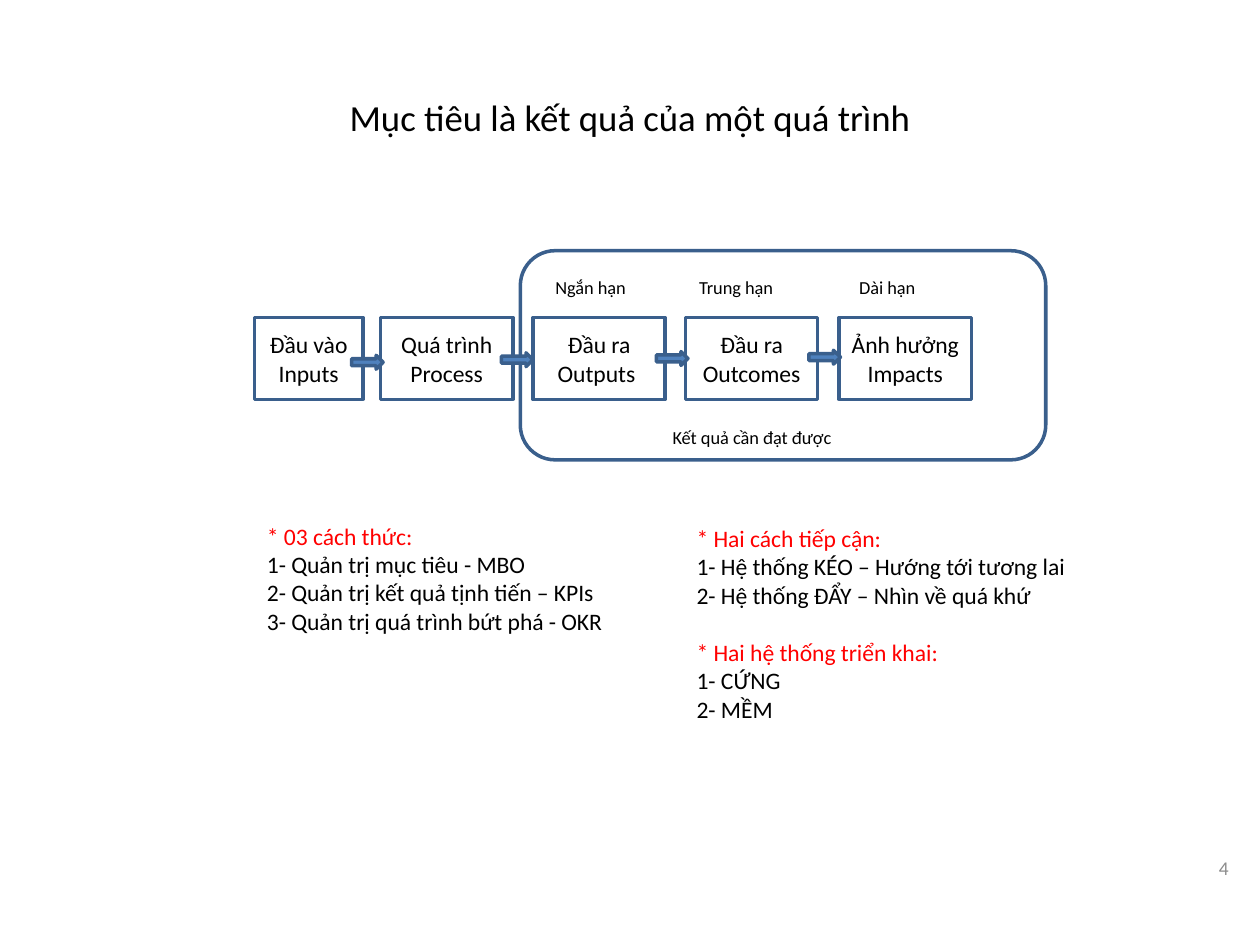
from pptx import Presentation
from pptx.dml.color import RGBColor
from pptx.enum import shapes, text
from pptx.util import Inches, Pt

BLACK = RGBColor(0x00, 0x00, 0x00)
RED = RGBColor(0xFF, 0x00, 0x00)
GREY = RGBColor(0x8C, 0x8C, 0x8C)
BLUE = RGBColor(0x4F, 0x81, 0xBD)
DARK_BLUE = RGBColor(0x3A, 0x5F, 0x8C)
FONT = "Calibri"

STAGES = [
    (2.02, 0.86, ["Đầu vào", "Inputs"]),
    (3.02, 1.05, ["Quá trình", "Process"]),
    (4.23, 1.05, ["Đầu ra", "Outputs "]),
    (5.44, 1.05, ["Đầu ra", "Outcomes"]),
    (6.66, 1.05, ["Ảnh hưởng", "Impacts"]),
]
LABELS = [
    (4.31, 2.14, 0.85, "Ngắn hạn"),
    (5.45, 2.14, 0.89, "Trung hạn"),
    (6.72, 2.14, 0.72, "Dài hạn"),
    (5.24, 3.33, 1.64, "Kết quả cần đạt được"),
]
ARROWS = [(2.79, 2.82), (3.98, 2.8), (5.21, 2.79), (6.42, 2.78)]
METHODS = [
    "* 03 cách thức:",
    "1- Quản trị mục tiêu - MBO",
    "2- Quản trị kết quả tịnh tiến – KPIs",
    "3- Quản trị quá trình bứt phá - OKR",
]
APPROACHES = [
    "* Hai cách tiếp cận:",
    "1- Hệ thống KÉO – Hướng tới tương lai",
    "2- Hệ thống ĐẨY – Nhìn về quá khứ",
    "* Hai hệ thống triển khai:",
    "1- CỨNG",
    "2- MỀM",
]


def write_lines(frame, lines, size, color=BLACK, align=text.PP_ALIGN.LEFT):
    for index, line in enumerate(lines):
        para = frame.paragraphs[0] if index == 0 else frame.add_paragraph()
        para.alignment = align
        heading = line.startswith("*")
        if heading and index:
            para.space_before = Pt(16.5)
        span = para.add_run()
        span.text = line
        span.font.name = FONT
        span.font.size = Pt(size)
        span.font.color.rgb = RED if heading else color


def add_title(page, title):
    box = page.shapes.title
    box.left, box.top = Inches(0.5), Inches(0.3)
    box.width, box.height = Inches(9), Inches(1.25)
    box.text_frame.vertical_anchor = text.MSO_ANCHOR.MIDDLE
    write_lines(box.text_frame, [title], 21, align=text.PP_ALIGN.CENTER)


def add_text(page, left, top, width, height, lines, size, wrap=True):
    box = page.shapes.add_textbox(Inches(left), Inches(top), Inches(width), Inches(height))
    box.text_frame.word_wrap = wrap
    box.text_frame.auto_size = text.MSO_AUTO_SIZE.SHAPE_TO_FIT_TEXT
    write_lines(box.text_frame, lines, size)


def add_page_number(page, number):
    box = page.shapes.add_textbox(Inches(7.52), Inches(6.69), Inches(2.33), Inches(0.4))
    box.text_frame.word_wrap = True
    box.text_frame.vertical_anchor = text.MSO_ANCHOR.MIDDLE
    write_lines(box.text_frame, [number], 11.1, GREY, text.PP_ALIGN.RIGHT)


def add_outline(page, kind, left, top, width, height, fill=None):
    shape = page.shapes.add_shape(kind, Inches(left), Inches(top), Inches(width), Inches(height))
    shape.shadow.inherit = False
    shape.line.color.rgb = DARK_BLUE
    shape.line.width = Pt(2)
    if fill is None:
        shape.fill.background()
    else:
        shape.fill.solid()
        shape.fill.fore_color.rgb = fill
    return shape


def add_stage(page, left, width, lines):
    shape = add_outline(page, shapes.MSO_SHAPE.RECTANGLE, left, 2.52, width, 0.65)
    frame = shape.text_frame
    frame.margin_left = frame.margin_right = Inches(0.05)
    frame.vertical_anchor = text.MSO_ANCHOR.MIDDLE
    write_lines(frame, lines, 13.5, align=text.PP_ALIGN.CENTER)


def main():
    deck = Presentation()
    deck.slide_width, deck.slide_height = Inches(10), Inches(7.5)
    page = deck.slides.add_slide(deck.slide_layouts[5])
    add_title(page, "Mục tiêu là kết quả của một quá trình")
    add_page_number(page, "4")
    for left, width, lines in STAGES:
        add_stage(page, left, width, lines)
    add_outline(page, shapes.MSO_SHAPE.ROUNDED_RECTANGLE, 4.13, 1.99, 4.17, 1.66)
    for left, top, width, label in LABELS:
        add_text(page, left, top, width, 0.28, [label], 10.5)
    for left, top in ARROWS:
        add_outline(page, shapes.MSO_SHAPE.RIGHT_ARROW, left, top, 0.25, 0.11, BLUE)
    add_text(page, 2.02, 4.09, 2.9, 1.01, METHODS, 13.5, wrap=False)
    add_text(page, 5.43, 4.11, 3.15, 1.69, APPROACHES, 13.5, wrap=False)
    deck.save("out.pptx")


if __name__ == "__main__":
    main()
